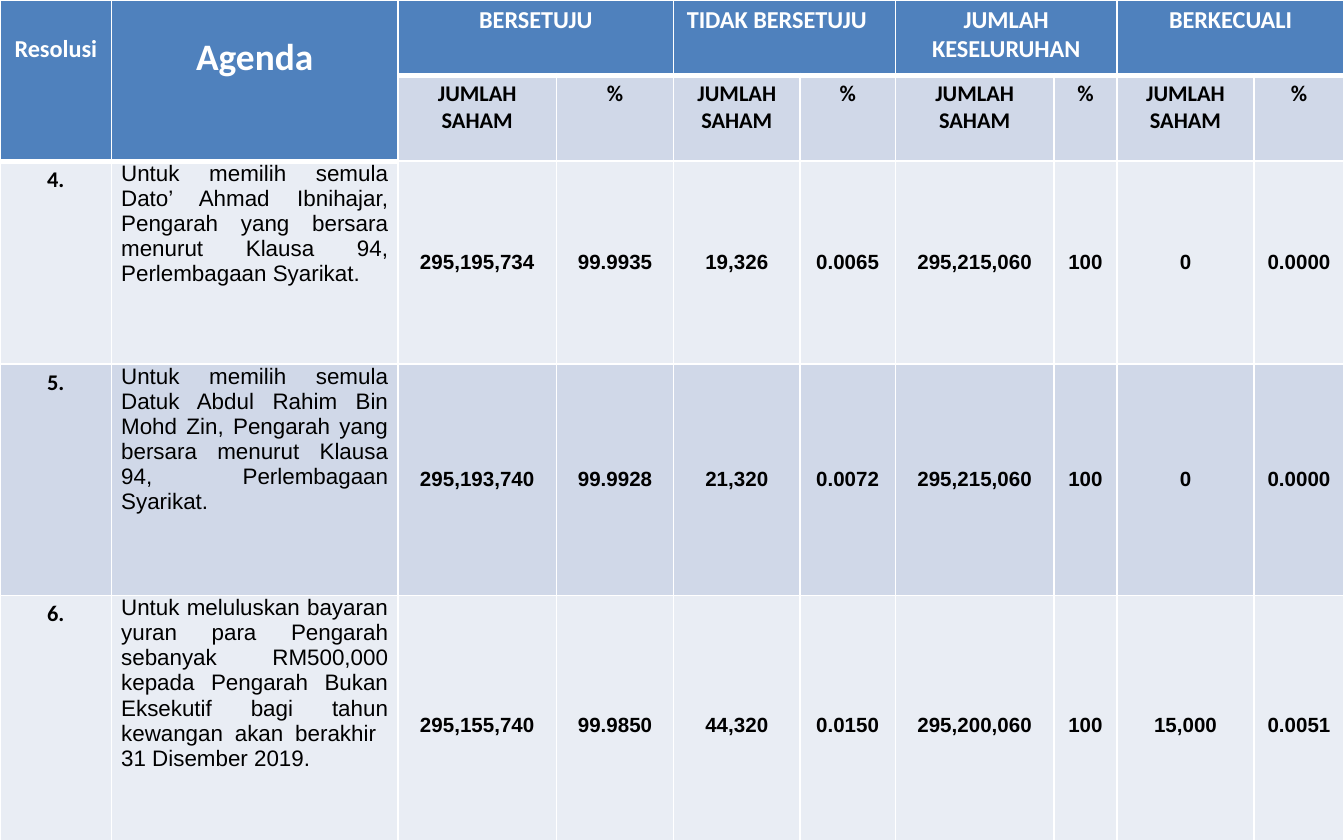
from lxml.etree import SubElement
from pptx import Presentation
from pptx.dml.color import RGBColor
from pptx.enum.text import MSO_ANCHOR as ANCHOR, PP_ALIGN as ALIGN
from pptx.oxml.ns import qn
from pptx.util import Cm, Pt

COLORS = {"header": "4F81BD", "dark": "D0D8E8", "light": "E9EDF4",
          "white": "FFFFFF", "black": "000000"}
COL_WIDTHS = [2.11, 5.41, 3.0, 2.21, 2.39, 1.8, 3.0, 1.19, 2.59, 1.7]
ROW_HEIGHTS = [1.42, 1.32, 3.84, 4.37, 4.93]
GROUPS = ["BERSETUJU", "TIDAK BERSETUJU", "JUMLAH KESELURUHAN", "BERKECUALI"]
RESOLUTIONS = [
    ("4.", "Untuk memilih semula Dato’ Ahmad Ibnihajar, Pengarah yang bersara "
     "menurut Klausa 94, Perlembagaan Syarikat.",
     ["295,195,734", "99.9935", "19,326", "0.0065",
      "295,215,060", "100", "0", "0.0000"]),
    ("5.", "Untuk memilih semula Datuk Abdul Rahim Bin Mohd Zin, Pengarah yang "
     "bersara menurut Klausa 94, Perlembagaan Syarikat.",
     ["295,193,740", "99.9928", "21,320", "0.0072",
      "295,215,060", "100", "0", "0.0000"]),
    ("6.", "Untuk meluluskan bayaran yuran para Pengarah sebanyak RM500,000 "
     "kepada Pengarah Bukan Eksekutif bagi tahun kewangan akan berakhir \n"
     "31 Disember 2019.",
     ["295,155,740", "99.9850", "44,320", "0.0150",
      "295,200,060", "100", "15,000", "0.0051"]),
]


def rgb(name):
    return RGBColor.from_string(COLORS[name])


def set_borders(cell, bottom=1):
    tc_pr = cell._tc.get_or_add_tcPr()
    for i, (side, width) in enumerate(zip("LRTB", (1, 1, 1, bottom))):
        ln = SubElement(tc_pr, qn(f"a:ln{side}"), w=str(Pt(width)))
        fill = SubElement(ln, qn("a:solidFill"))
        SubElement(fill, qn("a:srgbClr"), val=COLORS["white"])
        tc_pr.insert(i, ln)


def set_margins(cell, side, top, bottom):
    cell.margin_left = cell.margin_right = Cm(side)
    cell.margin_top, cell.margin_bottom = Cm(top), Cm(bottom)


def fill_cell(cell, text, fill, size, font="Calibri", color="black", bold=True,
              align=ALIGN.CENTER, anchor=ANCHOR.TOP, margins=(0.25, 0.1, 0.1)):
    cell.fill.solid()
    cell.fill.fore_color.rgb = rgb(fill)
    cell.vertical_anchor = anchor
    set_margins(cell, *margins)
    p = cell.text_frame.paragraphs[0]
    p.alignment = align
    for i, line in enumerate(text.split("\n")):
        if i:
            p.add_line_break()
        r = p.add_run()
        r.text = line
        r.font.name, r.font.size, r.font.bold = font, Pt(size), bold
        r.font.color.rgb = rgb(color)


def add_header(table):
    for col, (text, size) in enumerate([("Resolusi", 13), ("Agenda", 20)]):
        table.cell(0, col).merge(table.cell(1, col))
        fill_cell(table.cell(0, col), text, "header", size, color="white",
                  margins=(0.25, 0.66, 0.1))
    for i, group in enumerate(GROUPS):
        col = 2 + 2 * i
        table.cell(0, col).merge(table.cell(0, col + 1))
        align = ALIGN.LEFT if group == "TIDAK BERSETUJU" else ALIGN.CENTER
        fill_cell(table.cell(0, col), group, "header", 13, color="white",
                  align=align)
        for j, text in enumerate(["JUMLAH SAHAM", "%"]):
            fill_cell(table.cell(1, col + j), text, "dark", 12)


def add_resolution(table, row, number, agenda, votes):
    fill = "dark" if row % 2 else "light"
    tight = (0.18, 0, 0)
    fill_cell(table.cell(row, 0), number, fill, 12)
    fill_cell(table.cell(row, 1), agenda, fill, 12, font="Arial", bold=False,
              align=ALIGN.JUSTIFY, margins=tight)
    for col, value in enumerate(votes, start=2):
        fill_cell(table.cell(row, col), value, fill, 11, font="Arial",
                  anchor=ANCHOR.MIDDLE, margins=tight)


def add_vote_table(slide, left, top, width, height):
    rows, cols = len(ROW_HEIGHTS), len(COL_WIDTHS)
    table = slide.shapes.add_table(rows, cols, left, top, width, height).table
    for column, w in zip(table.columns, COL_WIDTHS):
        column.width = Cm(w)
    for row, h in zip(table.rows, ROW_HEIGHTS):
        row.height = Cm(h)
    for r in range(rows):
        for c in range(cols):
            is_header = r == 0 or (r == 1 and c < 2)
            set_borders(table.cell(r, c), bottom=3 if is_header else 1)
    add_header(table)
    for row, resolution in enumerate(RESOLUTIONS, start=2):
        add_resolution(table, row, *resolution)


def main():
    prs = Presentation()
    prs.slide_width, prs.slide_height = Cm(25.4), Cm(15.88)
    slide = prs.slides.add_slide(prs.slide_layouts[6])
    add_vote_table(slide, 0, 0, prs.slide_width, prs.slide_height)
    prs.save("out.pptx")


if __name__ == "__main__":
    main()
